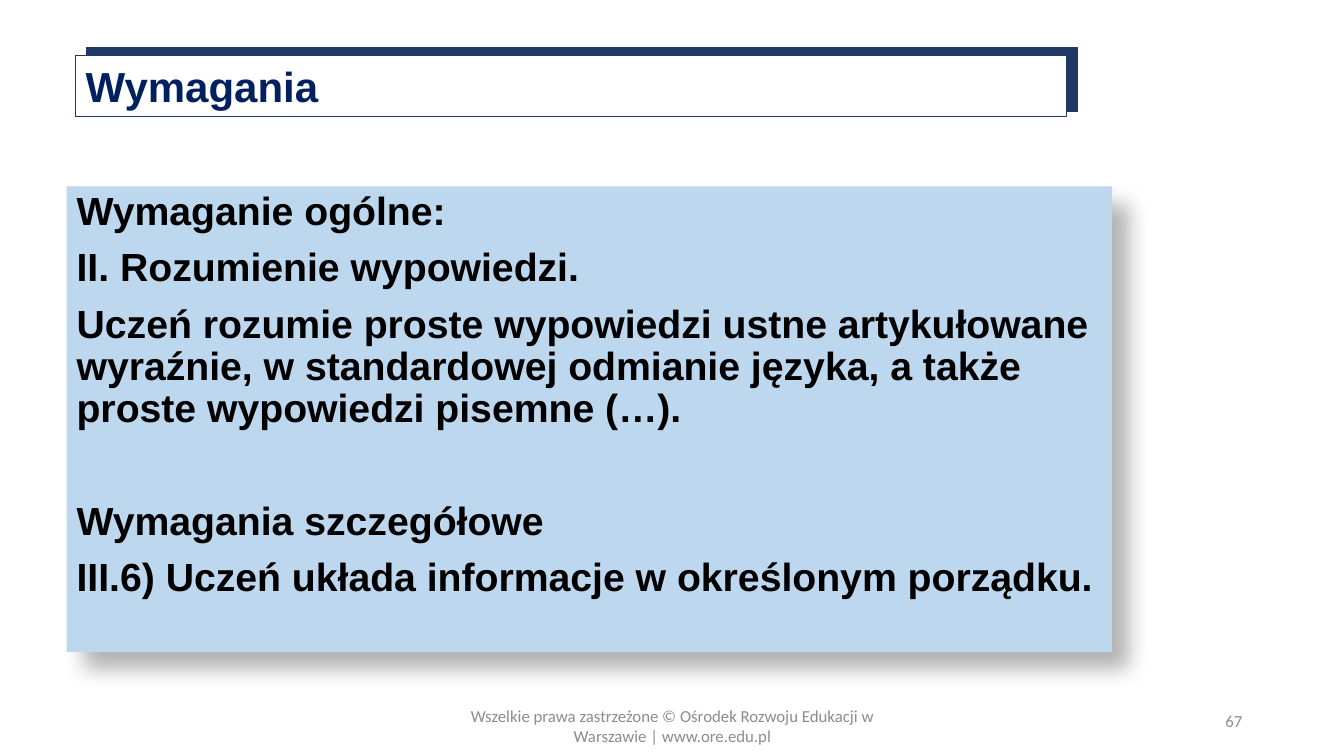
"""Builds the slide with the general and specific language requirements."""
from lxml import etree
from pptx import Presentation
from pptx.dml.color import RGBColor
from pptx.enum import shapes, text
from pptx.oxml import ns
from pptx.util import Inches, Pt

NAVY = RGBColor(0x20, 0x38, 0x64)
TITLE_BLUE = RGBColor(0x00, 0x20, 0x60)
PALE_BLUE = RGBColor(0xBD, 0xD7, 0xEE)
WHITE = RGBColor(0xFF, 0xFF, 0xFF)
BLACK = RGBColor(0x00, 0x00, 0x00)
GREY = RGBColor(0x8C, 0x8C, 0x8C)

REQUIREMENTS = [
    ("Wymaganie ogólne:", 0),
    ("II. Rozumienie wypowiedzi.", 10),
    ("Uczeń rozumie proste wypowiedzi ustne artykułowane wyraźnie, "
     "w standardowej odmianie języka, a także proste wypowiedzi pisemne (…).", 10),
    ("Wymagania szczegółowe", 50),
    ("III.6) Uczeń układa informacje w określonym porządku.", 10),
]


def place(shape, left, top, width, height):
    shape.left, shape.top = Inches(left), Inches(top)
    shape.width, shape.height = Inches(width), Inches(height)


def paint(shape, fill, outline=None):
    shape.fill.solid()
    shape.fill.fore_color.rgb = fill
    if outline is not None:
        shape.line.color.rgb = outline
        shape.line.width = Pt(0.75)


def set_frame(shape, anchor):
    frame = shape.text_frame
    frame.word_wrap = True
    frame.auto_size = text.MSO_AUTO_SIZE.NONE
    frame.vertical_anchor = anchor
    return frame


def style(paragraph, name, size, color, bold=False, align=text.PP_ALIGN.LEFT):
    paragraph.alignment = align
    font = paragraph.font
    font.name, font.size, font.bold = name, Pt(size), bold
    font.color.rgb = color


def remove_bullet(paragraph):
    properties = paragraph._p.get_or_add_pPr()
    properties.set("marL", "0")
    properties.set("indent", "0")
    etree.SubElement(properties, ns.qn("a:buNone"))


def cast_shadow(shape):
    shape.shadow.inherit = False
    effects = shape._element.spPr.find(ns.qn("a:effectLst"))
    shadow = etree.SubElement(
        effects, ns.qn("a:outerShdw"), blurRad=str(Pt(15)), dist=str(Pt(18)),
        dir="2700000", algn="tl", rotWithShape="0")
    color = etree.SubElement(shadow, ns.qn("a:srgbClr"), val=str(BLACK))
    etree.SubElement(color, ns.qn("a:alpha"), val="30000")


def add_title(slide):
    band = slide.shapes.add_shape(
        shapes.MSO_SHAPE.RECTANGLE, Inches(0.86), Inches(0.47), Inches(9.83), Inches(0.64))
    band.shadow.inherit = False
    paint(band, NAVY, NAVY)
    slide.shapes.title._element.addprevious(band._element)

    title = slide.shapes.title
    place(title, 0.75, 0.55, 9.83, 0.61)
    paint(title, WHITE, NAVY)
    frame = set_frame(title, text.MSO_ANCHOR.MIDDLE)
    frame.text = "Wymagania"
    style(frame.paragraphs[0], "Arial", 30, TITLE_BLUE, bold=True)


def add_requirements(slide):
    body = slide.placeholders[1]
    place(body, 0.66, 1.85, 10.37, 4.62)
    paint(body, PALE_BLUE)
    cast_shadow(body)
    frame = set_frame(body, text.MSO_ANCHOR.TOP)
    frame.text = "\n".join(wording for wording, _ in REQUIREMENTS)
    for paragraph, (_, gap) in zip(frame.paragraphs, REQUIREMENTS):
        remove_bullet(paragraph)
        paragraph.line_spacing = 0.9
        paragraph.space_before = Pt(gap)
        style(paragraph, "Arial", 28, BLACK, bold=True)


def add_footer(slide, wording, left, width, align, anchor):
    footer = slide.shapes.add_textbox(Inches(left), Inches(6.95), Inches(width), Inches(0.4))
    frame = set_frame(footer, anchor)
    frame.text = wording
    style(frame.paragraphs[0], "Calibri", 12, GREY, align=align)


def main():
    deck = Presentation()
    deck.slide_width, deck.slide_height = Inches(13.33), Inches(7.5)
    slide = deck.slides.add_slide(deck.slide_layouts[1])
    add_title(slide)
    add_requirements(slide)
    add_footer(slide, "67", 9.42, 3, text.PP_ALIGN.RIGHT, text.MSO_ANCHOR.MIDDLE)
    add_footer(
        slide,
        "Wszelkie prawa zastrzeżone © Ośrodek Rozwoju Edukacji w Warszawie | www.ore.edu.pl",
        4.42, 4.5, text.PP_ALIGN.CENTER, text.MSO_ANCHOR.TOP)
    deck.save("out.pptx")


if __name__ == "__main__":
    main()
